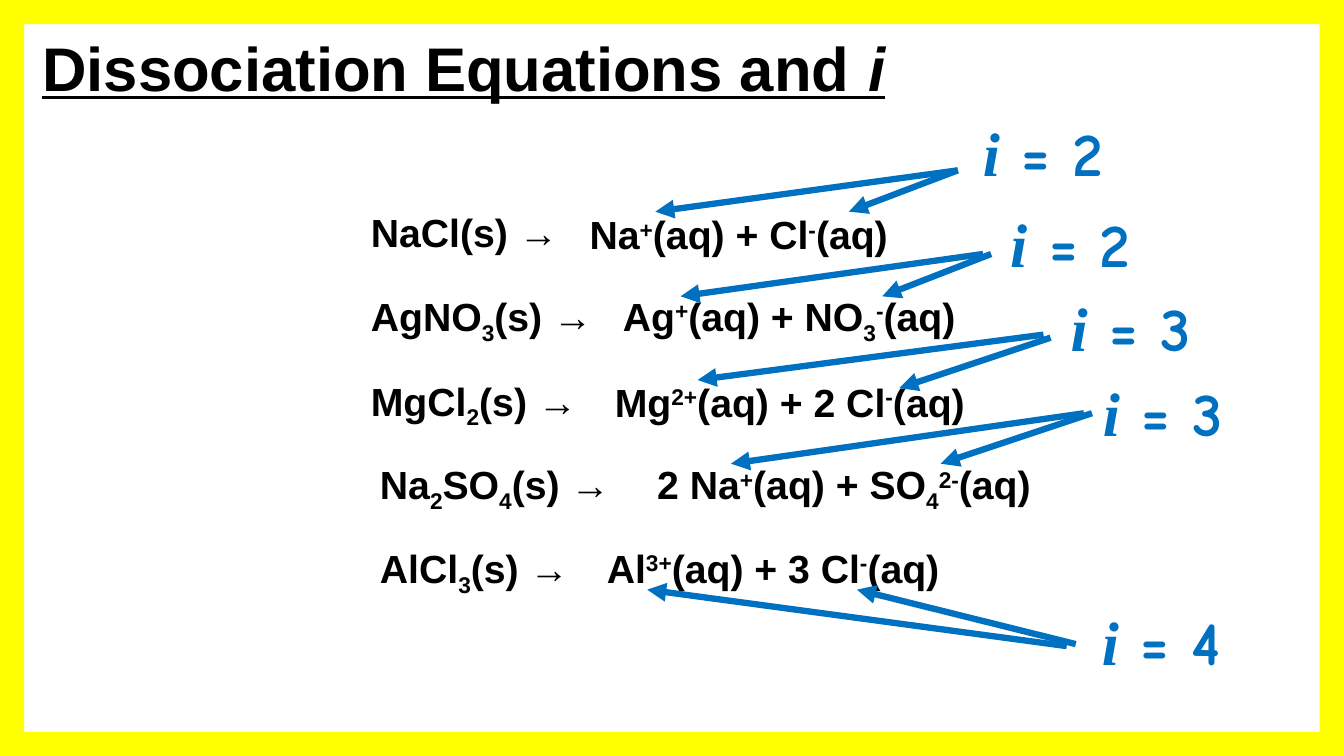
"""Builds a slide of dissociation equations with their van 't Hoff factors."""
from lxml import etree
from pptx import Presentation
from pptx.dml.color import RGBColor
from pptx.enum.shapes import MSO_CONNECTOR, MSO_SHAPE
from pptx.enum.text import MSO_ANCHOR, MSO_AUTO_SIZE, PP_ALIGN
from pptx.oxml.ns import qn
from pptx.util import Inches, Pt

BLACK = RGBColor(0x00, 0x00, 0x00)
BLUE = RGBColor(0x00, 0x70, 0xC0)
YELLOW = RGBColor(0xFF, 0xFF, 0x00)
STRAIGHT = MSO_CONNECTOR.STRAIGHT
FRAME = MSO_SHAPE.FRAME
MIDDLE = MSO_ANCHOR.MIDDLE
NO_FIT = MSO_AUTO_SIZE.NONE
FIT_SHAPE = MSO_AUTO_SIZE.SHAPE_TO_FIT_TEXT
LEFT = PP_ALIGN.LEFT

WIDTH, HEIGHT = 13.33, 7.5
TITLE_ONLY = 5
BASELINES = {"_": "-25000", "^": "30000"}

REACTANTS = [
    (3.58, 2.02, 2.75, "NaCl(s) →"),
    (3.58, 2.85, 2.75, "AgNO|_3|(s) →"),
    (3.58, 3.69, 2.75, "MgCl|_2|(s) →"),
    (3.67, 4.52, 3.25, "Na|_2|SO|_4|(s) →"),
    (3.67, 5.35, 2.75, "AlCl|_3|(s) →"),
]
PRODUCTS = [
    (5.75, 2.04, 4.67, "Na|^+|(aq) + Cl|^-|(aq)"),
    (6.08, 2.85, 4.67, "Ag|^+|(aq) + NO|_3|^-|(aq)"),
    (6, 3.7, 4.67, "Mg|^2+|(aq) + 2 Cl|^-|(aq)"),
    (6.42, 4.52, 4.67, "2 Na|^+|(aq) + SO|_4|^2-|(aq)"),
    (5.92, 5.35, 4.67, "Al|^3+|(aq) + 3 Cl|^-|(aq)"),
]
ION_ARROWS = [
    ((9.5, 1.69), (6.5, 2.1)),
    ((9.5, 1.69), (8.42, 2.1)),
    ((9.75, 2.52), (6.75, 2.94)),
    ((9.83, 2.52), (8.75, 2.94)),
    ((10.35, 3.32), (6.92, 3.77)),
    ((10.42, 3.35), (8.92, 3.85)),
    ((10.75, 4.1), (7.25, 4.6)),
    ((10.83, 4.1), (9.33, 4.6)),
    ((10.58, 6.41), (6.42, 5.85)),
    ((10.67, 6.39), (8.5, 5.85)),
]
FACTORS = [(9.65, 1.09, 2), (9.92, 1.99, 2), (10.52, 2.83, 3),
           (10.84, 3.67, 3), (10.83, 5.94, 4)]


class EquationSlide:
    """Holds the text style and the slide, and adds each kind of element."""

    def __init__(self, page):
        """Keep the page and its default font."""
        self.page = page
        self.font = "Arial"

    def span(self, para, text, size, color, font=None, italic=False):
        """Add one bold run and return it."""
        span = para.add_run()
        span.text = text
        span.font.name = font or self.font
        span.font.size = Pt(size)
        span.font.bold = True
        span.font.italic = italic
        span.font.color.rgb = color
        return span

    def title(self, parts):
        """Place the title and fill it with underlined (text, italic) runs."""
        box = self.page.shapes.title
        box.left, box.top = Inches(0.32), Inches(0.24)
        box.width, box.height = Inches(12.35), Inches(0.84)
        frame = box.text_frame
        frame.auto_size = NO_FIT
        frame.vertical_anchor = MIDDLE
        para = frame.paragraphs[0]
        para.alignment = LEFT
        for text, italic in parts:
            self.span(para, text, 44, BLACK, italic=italic).font.underline = True

    def text_box(self, left, top, width, height, wrap):
        """Add an empty text box and return its paragraph."""
        box = self.page.shapes.add_textbox(
            Inches(left), Inches(top), Inches(width), Inches(height))
        box.text_frame.word_wrap = wrap
        box.text_frame.auto_size = FIT_SHAPE
        return box.text_frame.paragraphs[0]

    def formula(self, left, top, width, markup):
        """Add a formula whose parts marked _ are lowered and ^ raised."""
        para = self.text_box(left, top, width, 0.57, True)
        for part in markup.split("|"):
            baseline = BASELINES.get(part[0])
            span = self.span(para, part[1:] if baseline else part, 28, BLACK)
            if baseline:
                span._r.get_or_add_rPr().set("baseline", baseline)

    def factor(self, left, top, value):
        """Add the label that gives the value of i."""
        para = self.text_box(left, top, 1.66, 0.84, False)
        self.span(para, "i", 44, BLUE, "Times New Roman", True)
        self.span(para, f" = {value}", 44, BLUE, "Comic Neue")

    def arrow(self, start, end):
        """Add a blue arrow that points at an ion."""
        arrow = self.page.shapes.add_connector(
            STRAIGHT, *(Inches(value) for value in start + end))
        arrow.line.color.rgb = BLUE
        arrow.line.width = Pt(4.5)
        etree.SubElement(arrow.line._get_or_add_ln(), qn("a:tailEnd"), type="triangle")
        etree.SubElement(arrow._element.spPr, qn("a:effectLst"))

    def border(self):
        """Add the yellow frame around the slide."""
        border = self.page.shapes.add_shape(FRAME, 0, 0, Inches(WIDTH), Inches(HEIGHT))
        border.adjustments[0] = 0.032
        border.shadow.inherit = False
        border.fill.solid()
        border.fill.fore_color.rgb = YELLOW
        border.line.fill.background()


def main():
    """Build the deck and save it."""
    deck = Presentation()
    deck.slide_width, deck.slide_height = Inches(WIDTH), Inches(HEIGHT)
    slide = EquationSlide(deck.slides.add_slide(deck.slide_layouts[TITLE_ONLY]))
    slide.title([("Dissociation Equations and ", False), ("i", True)])
    for formula in REACTANTS + PRODUCTS:
        slide.formula(*formula)
    for start, end in ION_ARROWS:
        slide.arrow(start, end)
    for factor in FACTORS:
        slide.factor(*factor)
    slide.border()
    deck.save("out.pptx")


if __name__ == "__main__":
    main()
